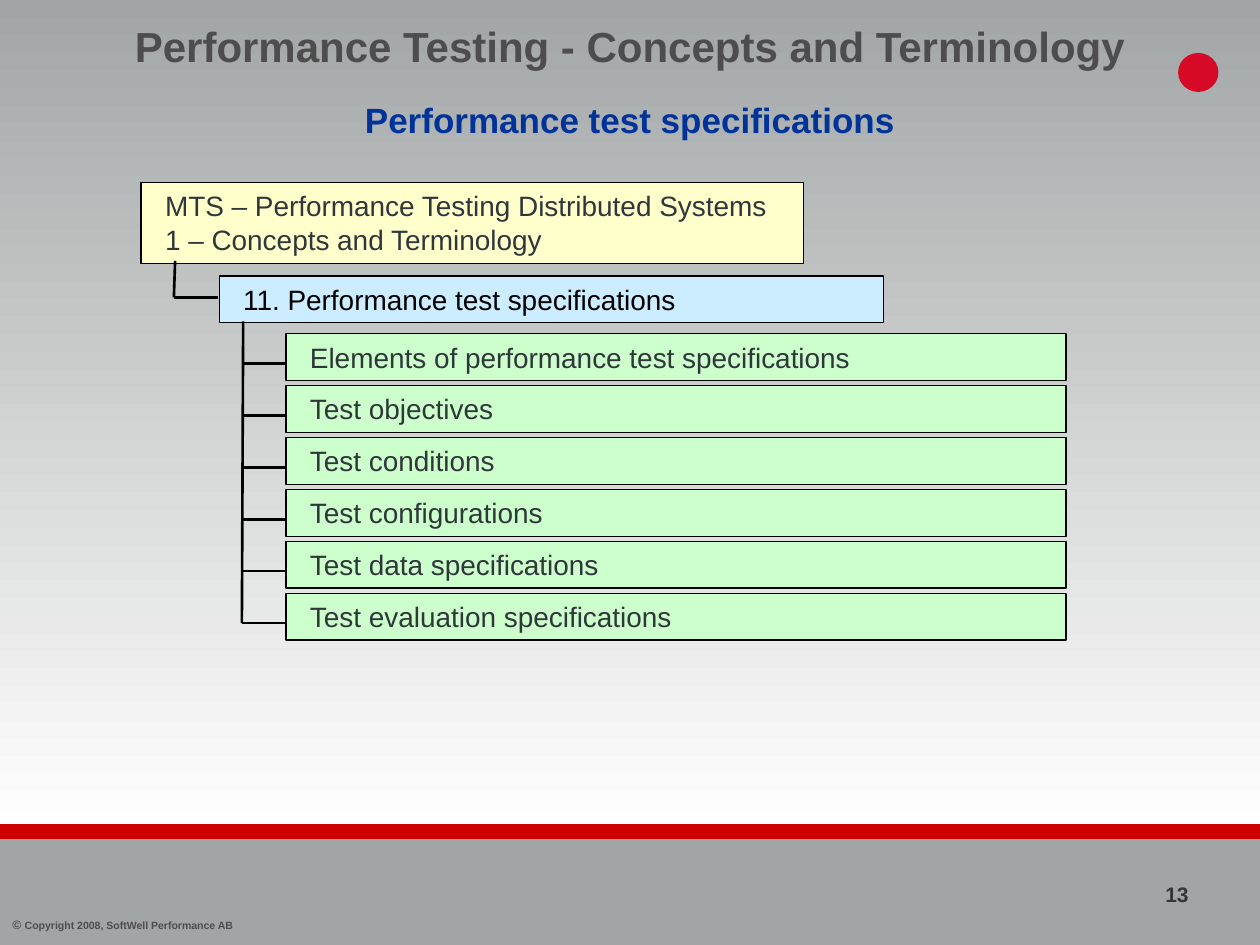
from lxml.etree import SubElement
from pptx import Presentation
from pptx.dml.color import RGBColor
from pptx.enum.shapes import MSO_CONNECTOR, MSO_SHAPE
from pptx.enum.text import MSO_ANCHOR, PP_ALIGN
from pptx.oxml.ns import qn
from pptx.util import Inches, Pt

COLUMNS, ROWS = 100, 75
FONT = "Arial"

BLACK = RGBColor(0x00, 0x00, 0x00)
WHITE = RGBColor(0xFF, 0xFF, 0xFF)
GREY = RGBColor(0xA2, 0xA5, 0xA5)
DARK_GREY = RGBColor(0x4D, 0x4D, 0x4D)
SLATE = RGBColor(0x30, 0x37, 0x3B)
RED = RGBColor(0xCC, 0x00, 0x00)
EMBLEM_RED = RGBColor(0xD6, 0x0A, 0x27)
BLUE = RGBColor(0x00, 0x33, 0x99)
YELLOW = RGBColor(0xFF, 0xFF, 0xCC)
LIGHT_BLUE = RGBColor(0xCC, 0xEC, 0xFF)
LIGHT_GREEN = RGBColor(0xCC, 0xFF, 0xCC)

TOPICS = [
    "Elements of performance test specifications",
    "Test objectives",
    "Test conditions",
    "Test configurations",
    "Test data specifications",
    "Test evaluation specifications",
]
FIRST_TOPIC_ROW = 26.5
TOPIC_PITCH = 4.12
BRANCH_DROP = 2.35


def grid(*cells):
    """Turn grid columns and rows, a tenth of an inch each, into lengths."""
    return [Inches(cell / 10) for cell in cells]


def style(para, size, color, bold=False):
    para.font.name = FONT
    para.font.size = Pt(size)
    para.font.color.rgb = color
    para.font.bold = bold


def add_panel(slide, area, color=None, kind=MSO_SHAPE.RECTANGLE):
    panel = slide.shapes.add_shape(kind, *grid(*area))
    panel.shadow.inherit = False
    panel.line.fill.background()
    if color is not None:
        panel.fill.solid()
        panel.fill.fore_color.rgb = color
    return panel


def add_label(slide, area, text, size, color, align=PP_ALIGN.LEFT,
              anchor=MSO_ANCHOR.TOP):
    frame = slide.shapes.add_textbox(*grid(*area)).text_frame
    frame.word_wrap = True
    frame.vertical_anchor = anchor
    para = frame.paragraphs[0]
    para.text = text
    para.alignment = align
    style(para, size, color, bold=True)
    return para


def add_node(slide, area, text, fill, color=SLATE):
    """Add one outlined box of the tree."""
    box = add_panel(slide, area, fill)
    box.line.color.rgb = BLACK
    box.line.width = Pt(0.75)
    frame = box.text_frame
    frame.word_wrap = True
    frame.vertical_anchor = MSO_ANCHOR.TOP
    frame.margin_left = Inches(0.19)
    para = frame.paragraphs[0]
    para.text = text
    para.alignment = PP_ALIGN.LEFT
    style(para, 16, color)


def add_line(slide, *ends):
    line = slide.shapes.add_connector(MSO_CONNECTOR.STRAIGHT, *grid(*ends))
    line.line.color.rgb = BLACK
    line.line.width = Pt(1.5)
    SubElement(line._element.spPr, qn("a:effectLst"))


def add_background(slide):
    backdrop = add_panel(slide, (0, 0, COLUMNS, 65.6))
    backdrop.fill.gradient()
    backdrop.fill.gradient_angle = 270
    for stop, color in zip(backdrop.fill.gradient_stops, (GREY, WHITE)):
        stop.color.rgb = color
    add_panel(slide, (0, 65.4, COLUMNS, 1.3), RED)
    add_panel(slide, (0, 66.6, COLUMNS, ROWS - 66.6), GREY)
    add_panel(slide, (93.5, 4.2, 3.2, 3.1), EMBLEM_RED, MSO_SHAPE.OVAL)


def add_footer(slide):
    para = add_label(slide, (0, 72.3, 25, 2.2), "© ", 7, DARK_GREY)
    span = para.add_run()
    span.text = "Copyright 2008, SoftWell Performance AB"
    span.font.size = Pt(6)
    add_label(slide, (91.5, 69.5, 8.5, 3), "13", 12, SLATE)


def add_headings(slide):
    add_label(slide, (0, 0, COLUMNS, 7.3),
              "Performance Testing - Concepts and Terminology",
              24, DARK_GREY, PP_ALIGN.CENTER, MSO_ANCHOR.MIDDLE)
    add_label(slide, (0, 7.3, COLUMNS, 4.3),
              "Performance test specifications", 20, BLUE, PP_ALIGN.CENTER)


def add_tree(slide):
    add_node(slide, (11.2, 14.5, 52.6, 6.4),
             "MTS – Performance Testing Distributed Systems\n"
             "1 – Concepts and Terminology", YELLOW)
    add_node(slide, (17.4, 21.9, 52.7, 3.7),
             "11. Performance test specifications", LIGHT_BLUE, BLACK)
    add_line(slide, 13.9, 20.7, 13.8, 23.6)
    add_line(slide, 13.8, 23.6, 17.3, 23.6)

    topic_rows = [FIRST_TOPIC_ROW + index * TOPIC_PITCH
                  for index in range(len(TOPICS))]
    for row, topic in zip(topic_rows, TOPICS):
        add_node(slide, (22.7, row, 61.9, 3.7), topic, LIGHT_GREEN)
    add_line(slide, 19.3, 25.5, 19.2, topic_rows[-1] + BRANCH_DROP)
    for row in topic_rows:
        add_line(slide, 19.2, row + BRANCH_DROP, 22.7, row + BRANCH_DROP)


def main():
    deck = Presentation()
    deck.slide_width, deck.slide_height = grid(COLUMNS, ROWS)
    slide = deck.slides.add_slide(deck.slide_layouts[6])
    add_background(slide)
    add_footer(slide)
    add_headings(slide)
    add_tree(slide)
    deck.save("out.pptx")


if __name__ == "__main__":
    main()
